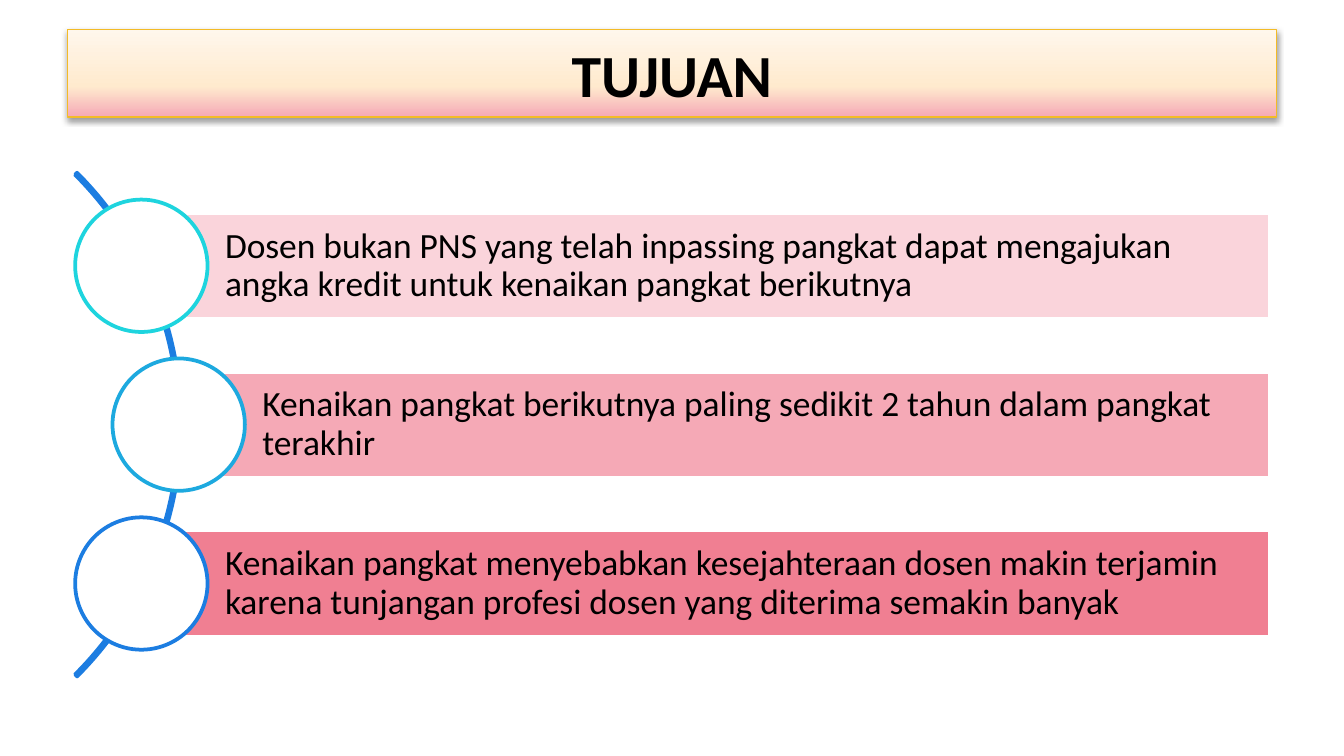
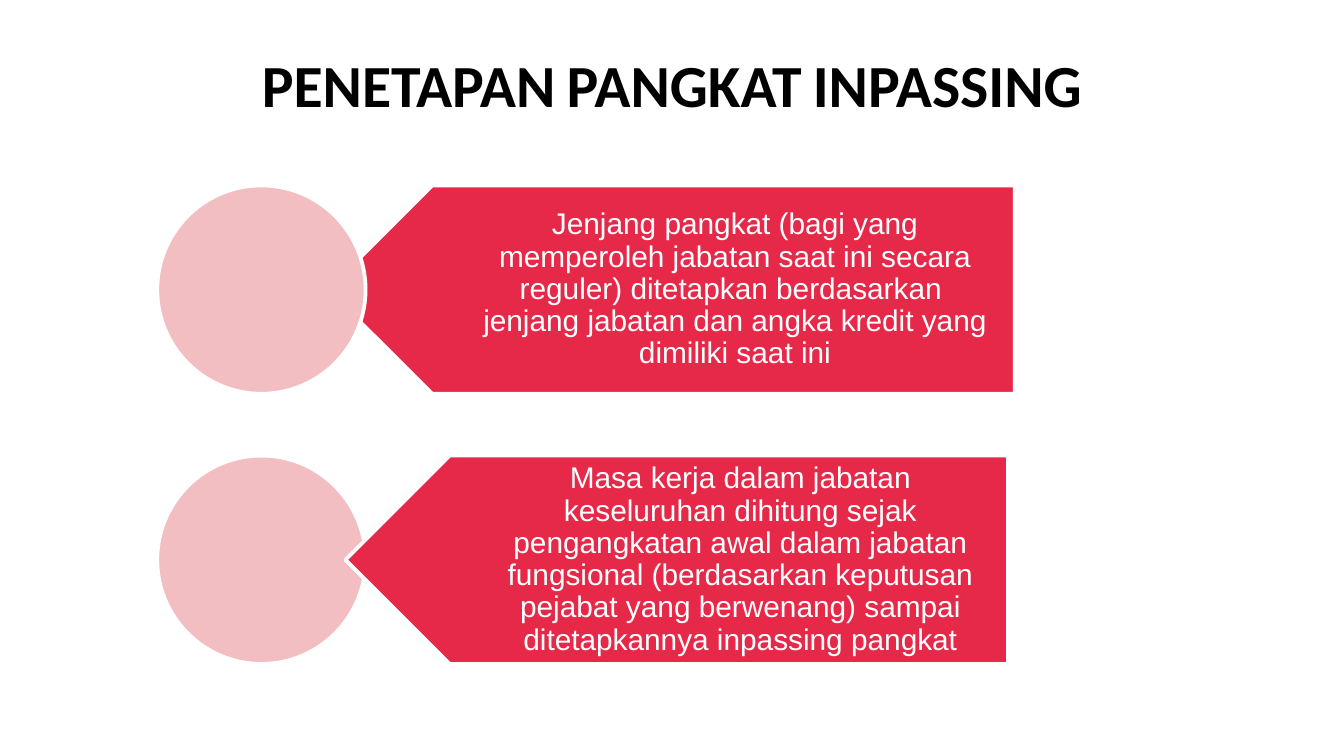
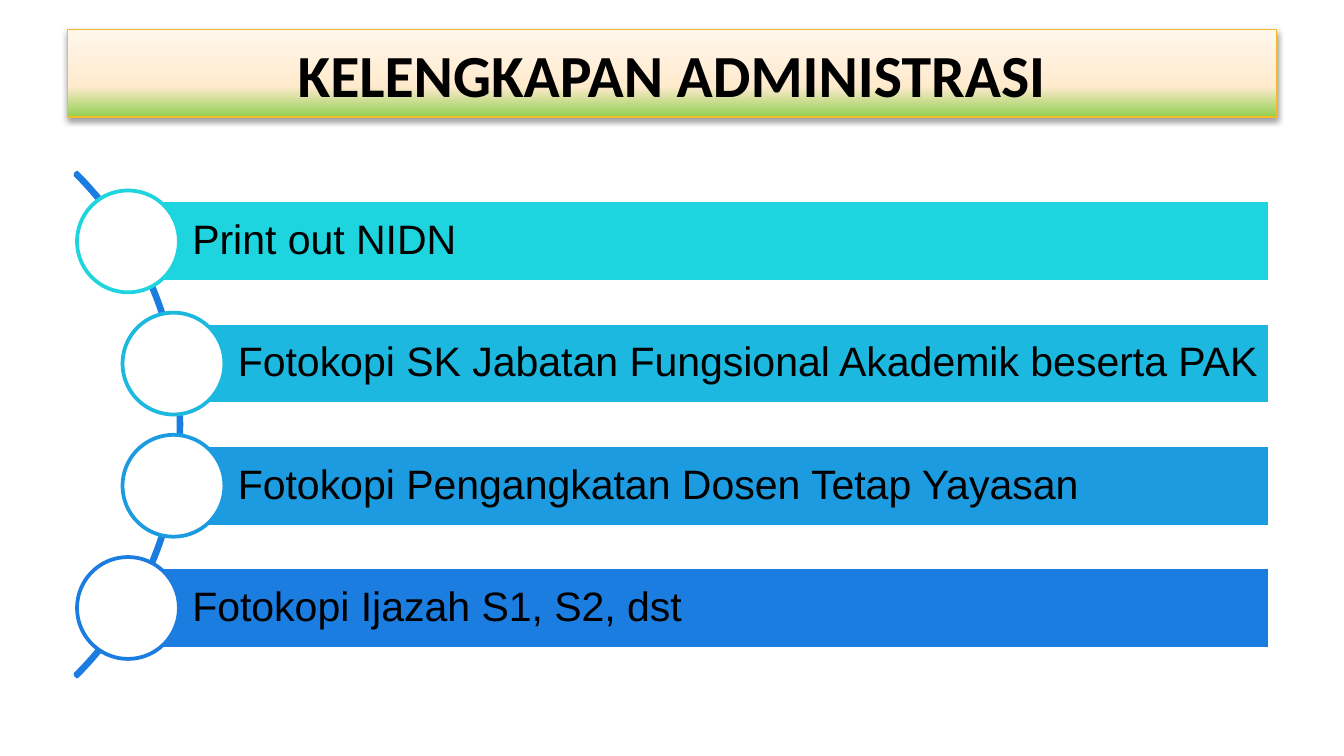
import copy
import math
from dataclasses import dataclass

import pptx
import pptx.dml.color
import pptx.enum.shapes
import pptx.enum.text
import pptx.oxml
import pptx.oxml.ns
import pptx.util

Inches = pptx.util.Inches
Kind = pptx.enum.shapes.MSO_SHAPE
Align = pptx.enum.text.PP_ALIGN
Anchor = pptx.enum.text.MSO_ANCHOR


@dataclass(frozen=True)
class Theme:
    black: str = "000000"
    white: str = "FFFFFF"
    gold: str = "F3BB27"
    cream: str = "FFEACE"
    pale: str = "FFF7EC"
    rose: str = "F5A9B6"
    green: str = "92D050"
    blue: str = "1C7DE1"
    red: str = "E62949"
    blush: str = "F3BEC1"
    head: str = "Calibri"
    body: str = "Arial"
    title: float = 32
    large: float = 22
    mid: float = 19
    small: float = 16
    edge: float = 2


@dataclass(frozen=True)
class Box:
    left: float
    top: float
    width: float
    height: float

    def place(self):
        return [Inches(v) for v in (self.left, self.top, self.width, self.height)]


T = Theme()
BAND = Box(0.5, 0.22, 9, 0.65)
LIST = Box(0.5, 1.19, 8.95, 3.94)
TAGS = Box(1.17, 1.38, 6.38, 3.56)

GOALS = [
    ("Dosen bukan PNS yang telah inpassing pangkat dapat mengajukan angka kredit "
     "untuk kenaikan pangkat berikutnya", "FAD4DB", "1ED4DE"),
    ("Kenaikan pangkat berikutnya paling sedikit 2 tahun dalam pangkat terakhir",
     "F5A9B6", "1DA9DF"),
    ("Kenaikan pangkat menyebabkan kesejahteraan dosen makin terjamin karena "
     "tunjangan profesi dosen yang diterima semakin banyak", "F07F92", "1C7DE1"),
]
PAPERS = [
    ("Print out NIDN", "1ED4DE", "1ED4DE"),
    ("Fotokopi SK Jabatan Fungsional Akademik beserta PAK", "1DB8DF", "1DB8DF"),
    ("Fotokopi Pengangkatan Dosen Tetap Yayasan", "1D9BE0", "1D9BE0"),
    ("Fotokopi Ijazah S1, S2, dst", "1C7DE1", "1C7DE1"),
]
# Text, offset and width of the tag, and whether the disc lies on top
RULES = [
    ("Jenjang pangkat (bagi yang memperoleh jabatan saat ini secara reguler) "
     "ditetapkan berdasarkan  jenjang jabatan dan angka kredit yang dimiliki saat ini",
     1.27, 5.11, True),
    ("Masa kerja dalam jabatan keseluruhan dihitung sejak pengangkatan awal dalam "
     "jabatan fungsional (berdasarkan keputusan pejabat yang berwenang) sampai "
     "ditetapkannya inpassing pangkat", 1.4, 4.93, False),
]


def color(code):
    return pptx.dml.color.RGBColor.from_string(code)


def draw(slide, kind, box, fill, line):
    shape = slide.shapes.add_shape(kind, *box.place())
    shape.shadow.inherit = False
    if fill:
        shape.fill.solid()
        shape.fill.fore_color.rgb = color(fill)
    else:
        shape.fill.background()
    shape.line.color.rgb = color(line)
    shape.line.width = pptx.util.Pt(T.edge)
    return shape


def write(shape, text, font, size, ink, align, pads=None, bold=False,
          anchor=Anchor.MIDDLE, space=0.9):
    frame = shape.text_frame
    frame.text = text
    frame.word_wrap = True
    frame.auto_size = pptx.enum.text.MSO_AUTO_SIZE.NONE
    frame.vertical_anchor = anchor
    if pads:
        (frame.margin_left, frame.margin_top,
         frame.margin_right, frame.margin_bottom) = [Inches(p) for p in pads]
    para = frame.paragraphs[0]
    para.alignment = align
    para.line_spacing = space
    face = para.runs[0].font
    face.name, face.size, face.bold = font, pptx.util.Pt(size), bold
    face.color.rgb = color(ink)


def head(slide, text, box, anchor=Anchor.MIDDLE):
    title = slide.shapes.title
    title.left, title.top, title.width, title.height = box.place()
    write(title, text, T.head, T.title, T.black, Align.CENTER,
          bold=True, anchor=anchor, space=1.0)
    return title


def plain(slide, text, box):
    title = head(slide, text, box, Anchor.BOTTOM)
    run = title.text_frame.paragraphs[0].runs[0]
    run._r.get_or_add_rPr().set("cap", "small")


def band(slide, text, box, base):
    title = head(slide, text, box)
    # Gradient rising from the base colour
    title.fill.gradient()
    title.fill.gradient_angle = 90
    props = title._element.spPr
    stops = next(props.iter(pptx.oxml.ns.qn("a:gsLst")))
    stops.append(copy.deepcopy(stops[0]))
    shades = [(0, base), (0.35, T.cream), (1, T.pale)]
    for stop, (spot, code) in zip(title.fill.gradient_stops, shades):
        stop.position = spot
        stop.color.rgb = color(code)
    title.line.color.rgb = color(T.gold)
    title.line.width = pptx.util.Pt(0.75)
    # Soft shadow below
    props.append(pptx.oxml.parse_xml(
        f'<a:effectLst {pptx.oxml.ns.nsdecls("a")}>'
        '<a:outerShdw blurRad="40000" dist="20000" dir="5400000" rotWithShape="0">'
        f'<a:srgbClr val="{T.black}"><a:alpha val="38000"/></a:srgbClr>'
        '</a:outerShdw></a:effectLst>'))


def curve(slide, box, rows, font, size):
    # Arc that the discs follow
    radius = 2.65
    hub = box.left - 1.82
    mid = box.top + box.height / 2
    arc = draw(slide, Kind.BLOCK_ARC,
               Box(hub + 0.02 - radius, mid - radius, 2 * radius, 2 * radius),
               None, T.blue)
    for i, value in enumerate((189, 27, 0.004)):
        arc.adjustments[i] = value
    # Bars with a disc centred on each left edge
    count = len(rows)
    tall = box.height / (1.5 * count + 0.5)
    disc = 1.25 * tall
    for i, (text, fill, ring) in enumerate(rows):
        shift = (i - (count - 1) / 2) * 1.5 * tall
        x = hub + math.sqrt(radius ** 2 - shift ** 2)
        y = mid + shift
        bar = draw(slide, Kind.RECTANGLE,
                   Box(x, y - tall / 2, box.left + box.width - x, tall), fill, T.white)
        write(bar, text, font, size, T.black, Align.LEFT, (0.79 * tall, 0.05, 0.05, 0.05))
        draw(slide, Kind.OVAL, Box(x - disc / 2, y - disc / 2, disc, disc), T.white, ring)


def tag(slide, box, text):
    plate = draw(slide, Kind.PENTAGON, box, T.red, T.white)
    plate.rotation = 180
    tip = box.height / 4
    area = Box(box.left + tip, box.top, box.width - tip, box.height)
    label = slide.shapes.add_textbox(*area.place())
    write(label, text, T.body, T.small, T.white, Align.CENTER, (0.68, 0.07, 0.12, 0.07))


def tags(slide, box, rows):
    disc = 1.55
    step = (box.height - disc) / (len(rows) - 1)
    for i, (text, shift, width, front) in enumerate(rows):
        y = box.top + i * step
        spot = Box(box.left, y, disc, disc)
        if not front:
            draw(slide, Kind.OVAL, spot, T.blush, T.white)
        tag(slide, Box(box.left + shift, y, width, disc), text)
        if front:
            draw(slide, Kind.OVAL, spot, T.blush, T.white)


def main():
    deck = pptx.Presentation()
    # Widescreen, 16 to 9
    deck.slide_width = Inches(10)
    deck.slide_height = Inches(10 * 9 / 16)
    goals, rules, papers = [deck.slides.add_slide(deck.slide_layouts[5]) for _ in range(3)]

    band(goals, "TUJUAN", BAND, T.rose)
    curve(goals, LIST, GOALS, T.head, T.mid)

    plain(rules, "PENETAPAN PANGKAT INPASSING", Box(0.5, 0.23, 9, 0.71))
    tags(rules, TAGS, RULES)

    band(papers, "KELENGKAPAN ADMINISTRASI", BAND, T.green)
    curve(papers, LIST, PAPERS, T.body, T.large)

    deck.save("out.pptx")


if __name__ == "__main__":
    main()
